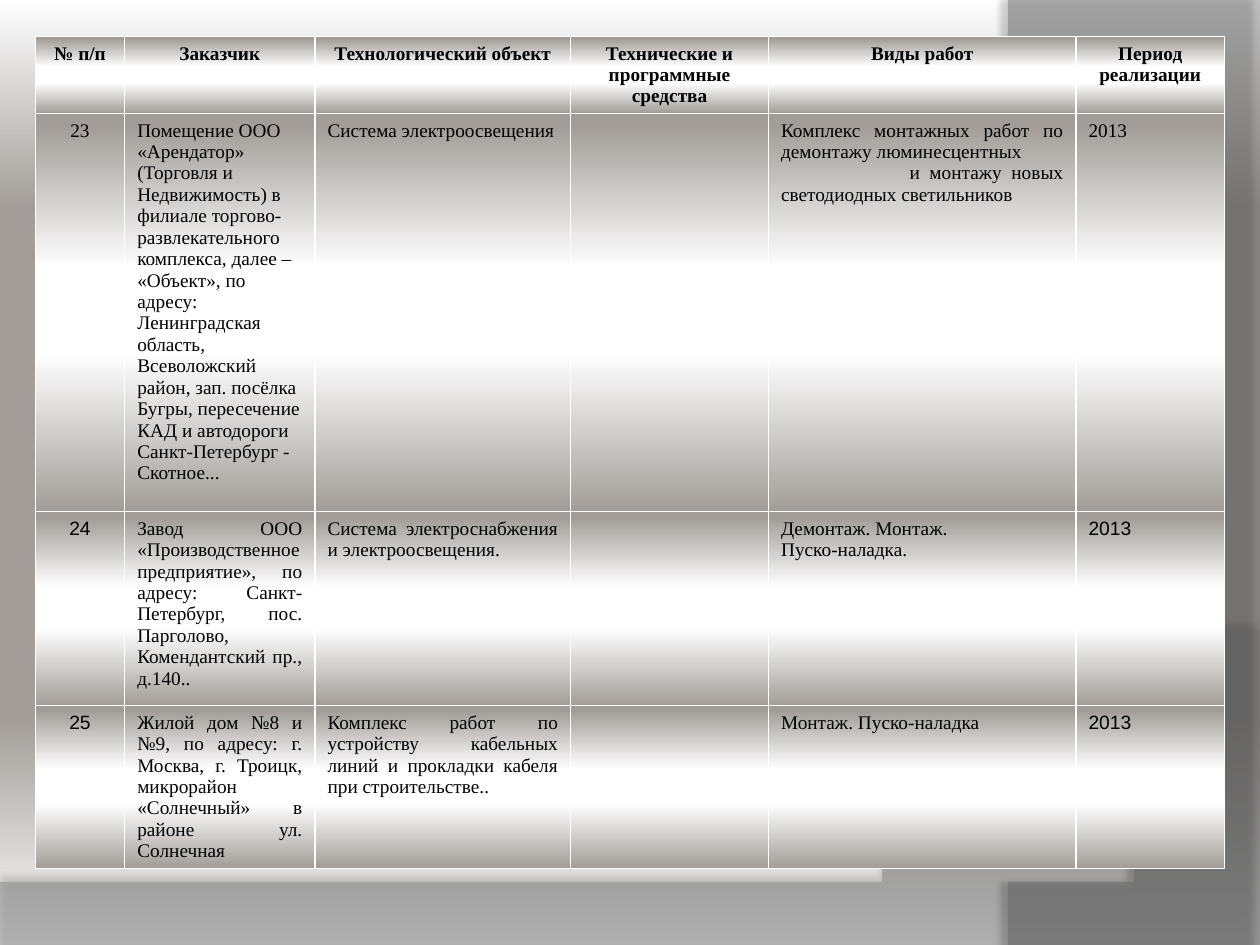
from lxml.etree import SubElement
from pptx import Presentation
from pptx.dml.color import RGBColor
from pptx.enum.text import PP_ALIGN
from pptx.oxml.ns import qn
from pptx.util import Inches, Pt

SERIF, SANS = "Times New Roman", "Arial"
LEFT, CENTER, JUSTIFY = PP_ALIGN.LEFT, PP_ALIGN.CENTER, PP_ALIGN.JUSTIFY

COLUMN_WIDTHS = [0.71, 1.51, 2.03, 1.57, 2.44, 1.18]
ROW_HEIGHTS = [0.6, 3.16, 1.54, 1.28]
SECOND_LINE_INDENT = 1.02

HEADINGS = ["№ п/п", "Заказчик", "Технологический объект",
            "Технические и программные средства", "Виды работ", "Период реализации"]
PROJECTS = [
    ["23",
     "Помещение ООО «Арендатор» (Торговля и Недвижимость) в филиале "
     "торгово-развлекательного комплекса, далее – «Объект», по адресу: "
     "Ленинградская область, Всеволожский район, зап. посёлка Бугры, пересечение КАД "
     "и автодороги Санкт-Петербург - Скотное...",
     "Система электроосвещения", "",
     "Комплекс монтажных работ по демонтажу люминесцентных\n"
     "и монтажу новых светодиодных светильников", "2013"],
    ["24",
     "Завод ООО «Производственное предприятие», по адресу: Санкт-Петербург, "
     "пос. Парголово, Комендантский пр., д.140..",
     "Система электроснабжения и электроосвещения.", "",
     "Демонтаж. Монтаж.\nПуско-наладка.", "2013"],
    ["25",
     "Жилой дом №8 и №9, по адресу: г. Москва, г. Троицк, микрорайон «Солнечный» "
     "в районе ул. Солнечная",
     "Комплекс работ по устройству кабельных линий и прокладки кабеля при строительстве..",
     "", "Монтаж. Пуско-наладка", "2013"],
]
ALIGNMENTS = [
    [CENTER, LEFT, JUSTIFY, LEFT, JUSTIFY, LEFT],
    [CENTER, JUSTIFY, JUSTIFY, LEFT, LEFT, JUSTIFY],
    [CENTER, JUSTIFY, JUSTIFY, LEFT, JUSTIFY, JUSTIFY],
]


def rgb(value):
    return RGBColor.from_string(value)


def add_color(parent, value, opacity=100):
    color = SubElement(parent, qn("a:srgbClr"), val=value)
    if opacity < 100:
        SubElement(color, qn("a:alpha"), val=str(opacity * 1000))


def bezier(start, control1, control2, end, steps=60):
    """Points along a cubic curve, without its start."""
    points = []
    for step in range(1, steps + 1):
        t = step / steps
        weights = ((1 - t) ** 3, 3 * t * (1 - t) ** 2, 3 * t * t * (1 - t), t ** 3)
        points.append(tuple(sum(w * p[axis] for w, p in
                                zip(weights, (start, control1, control2, end)))
                            for axis in (0, 1)))
    return points


class SlideBuilder:
    text_size = Pt(11)
    text_color = "000000"
    border_color = "FFFFFF"
    background_stops = [(0, "FFFFFF"), (22, "A29D99"), (76, "A29D99"), (100, "FFFFFF")]
    cell_stops = [(3, "A29D99"), (39, "FFFFFF"), (60, "FFFFFF"), (100, "A29D99")]

    def __init__(self, slide):
        self.slide = slide

    def gradient(self, fill, owner, stops):
        """Give the fill inside the owner element a top-to-bottom gradient."""
        fill.gradient()
        fill.gradient_angle = 270
        stop_list = next(owner.iter(qn("a:gsLst")))
        for old_stop in list(stop_list):
            stop_list.remove(old_stop)
        for position, value in stops:
            add_color(SubElement(stop_list, qn("a:gs"), pos=str(position * 1000)), value)

    def background(self):
        self.gradient(self.slide.background.fill, self.slide.element, self.background_stops)

    def wave(self, points, color, opacity, shadow_opacity, shadow_distance, shadow_angle):
        builder = self.slide.shapes.build_freeform(*points[0], scale=Inches(1))
        builder.add_line_segments(points[1:], close=True)
        shape = builder.convert_to_shape()
        shape.line.fill.background()
        shape.fill.solid()
        shape.fill.fore_color.rgb = rgb(color)
        fill_color = next(shape.element.spPr.iter(qn("a:srgbClr")))
        SubElement(fill_color, qn("a:alpha"), val=str(opacity * 1000))
        shape.shadow.inherit = False
        effects = shape.element.spPr.find(qn("a:effectLst"))
        shadow = SubElement(effects, qn("a:outerShdw"), blurRad=str(Pt(4)),
                            dist=str(Pt(shadow_distance)), dir=str(shadow_angle * 60000),
                            algn="ctr", rotWithShape="0")
        add_color(shadow, "000000", shadow_opacity)

    def cell(self, cell, text, alignment, font_name=SERIF, bold=False):
        cell.text = text
        for paragraph in cell.text_frame.paragraphs:
            paragraph.alignment = alignment
            font = paragraph.font
            font.name, font.size, font.bold = font_name, self.text_size, bold
            font.color.rgb = rgb(self.text_color)
        properties = cell._tc.get_or_add_tcPr()
        for side in ("lnL", "lnR", "lnT", "lnB"):
            border = SubElement(properties, qn(f"a:{side}"), w=str(Pt(1)))
            add_color(SubElement(border, qn("a:solidFill")), self.border_color)
        self.gradient(cell.fill, cell._tc, self.cell_stops)

    def table(self, left, top):
        table = self.slide.shapes.add_table(
            len(ROW_HEIGHTS), len(COLUMN_WIDTHS), Inches(left), Inches(top),
            Inches(sum(COLUMN_WIDTHS)), Inches(sum(ROW_HEIGHTS))).table
        table.horz_banding = False
        for column, width in zip(table.columns, COLUMN_WIDTHS):
            column.width = Inches(width)
        for row, height in zip(table.rows, ROW_HEIGHTS):
            row.height = Inches(height)
        for column, heading in enumerate(HEADINGS):
            self.cell(table.cell(0, column), heading, CENTER, bold=True)
        for row, (project, alignments) in enumerate(zip(PROJECTS, ALIGNMENTS), start=1):
            for column, (text, alignment) in enumerate(zip(project, alignments)):
                sans = row > 1 and column in (0, len(HEADINGS) - 1)
                self.cell(table.cell(row, column), text, alignment, SANS if sans else SERIF)
        return table


def main():
    presentation = Presentation()
    presentation.slide_width, presentation.slide_height = Inches(10), Inches(7.5)
    builder = SlideBuilder(presentation.slides.add_slide(presentation.slide_layouts[6]))
    builder.background()

    bottom_wave = [(0, 7.05), (0, 7.5), (10, 7.5), (10, 5.2)]
    bottom_wave += bezier((10, 5.2), (5.59, 7.29), (3.91, 7.19), (0, 7.05))
    builder.wave(bottom_wave, "7F7F7F", 45, 35, 3.5, 270)

    right_wave = [(10, 0.02), (10, 7.5), (8.21, 7.5)]
    right_wave += bezier((8.21, 7.5), (9.35, 6.19), (10.18, 3), (8, 0))
    builder.wave(right_wave, "5E5E5E", 40, 45, 4, 180)

    projects = builder.table(0.28, 0.29)
    lamp_mounting = projects.cell(1, 4).text_frame.paragraphs[1]
    lamp_mounting._p.get_or_add_pPr().set("indent", str(Inches(SECOND_LINE_INDENT)))
    presentation.save("out.pptx")


if __name__ == "__main__":
    main()
